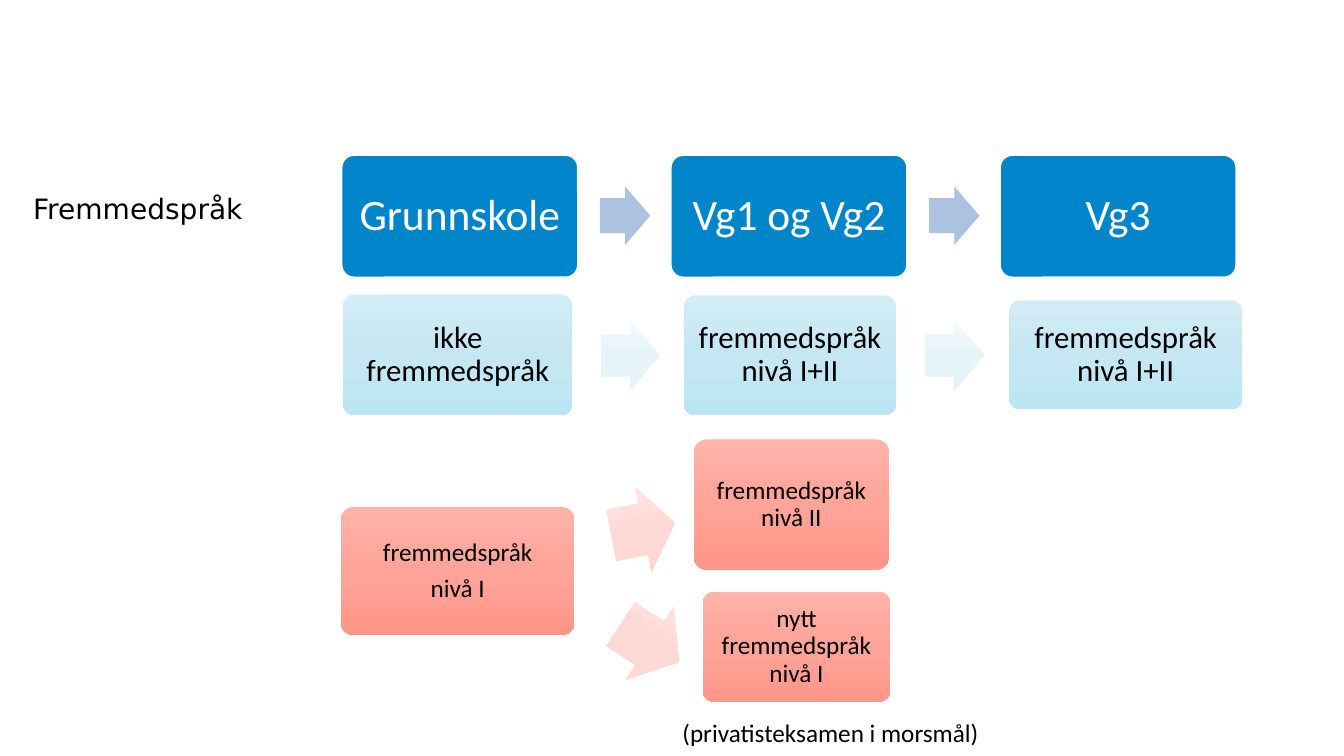
from copy import deepcopy
from dataclasses import dataclass

from pptx import Presentation
from pptx.dml.color import RGBColor
from pptx.enum.shapes import MSO_SHAPE
from pptx.enum.text import MSO_ANCHOR, MSO_AUTO_SIZE, PP_ALIGN
from pptx.oxml.ns import qn
from pptx.util import Inches, Pt

ROUND = MSO_SHAPE.ROUNDED_RECTANGLE
ARROW = MSO_SHAPE.RIGHT_ARROW
MIDDLE = MSO_ANCHOR.MIDDLE
CENTER = PP_ALIGN.CENTER
FIT = MSO_AUTO_SIZE.SHAPE_TO_FIT_TEXT

Frame = tuple[float, float, float, float]


@dataclass(frozen=True)
class Style:
    box: tuple[str, ...]
    arrow: tuple[str, ...]
    ink: str
    size: float
    inset: float
    line: str = ""


@dataclass(frozen=True)
class Theme:
    font: str = "Calibri"
    label: str = "DejaVu Sans"
    ink: str = "000000"
    note: float = 18
    title: float = 20
    head: Style = Style(("0085CA",), ("ABC2E1",), "FFFFFF", 31, 0.13, "FFFFFF")
    blue: Style = Style(("D3EDF6", "C5E7F3", "BBE5F3"),
                        ("F4FAFD", "E6F4F9", "E2F3F9"), "000000", 22, 0.09)
    red: Style = Style(("FFB3A9", "FFA499", "FF9688"),
                       ("FFE9E7", "FFD9D6", "FFD5D1"), "000000", 18, 0.07)


@dataclass(frozen=True)
class Box:
    frame: Frame
    style: Style
    lines: tuple[str, ...]


@dataclass(frozen=True)
class Arrow:
    frame: Frame
    style: Style
    turn: float = 0


THEME = Theme()
STEP = 3.265
HEADS = ("Grunnskole", "Vg1 og Vg2", "Vg3")

BOXES = [Box((3.39 + STEP * i, 1.54, 2.34, 1.21), THEME.head, (name,))
         for i, name in enumerate(HEADS)] + [
    Box((3.4, 2.92, 2.28, 1.2), THEME.blue, ("ikke fremmedspråk",)),
    Box((6.78, 2.93, 2.11, 1.19), THEME.blue, ("fremmedspråk nivå I+II",)),
    Box((10.01, 2.98, 2.31, 1.08), THEME.blue, ("fremmedspråk nivå I+II",)),
    Box((3.38, 5.03, 2.32, 1.27), THEME.red, ("fremmedspråk", "nivå I")),
    Box((6.88, 4.36, 1.94, 1.29), THEME.red, ("fremmedspråk nivå II",)),
    Box((6.97, 5.87, 1.86, 1.09), THEME.red, ("nytt fremmedspråk nivå I",)),
]

ARROWS = [Arrow((5.95 + STEP * i, 1.85, 0.5, 0.58), THEME.head)
          for i in range(len(HEADS) - 1)] + [
    Arrow((5.96, 3.18, 0.58, 0.69), THEME.blue),
    Arrow((9.17, 3.18, 0.59, 0.69), THEME.blue),
    Arrow((6.06, 4.82, 0.64, 0.86), THEME.red, 348.9),
    Arrow((6.1, 5.95, 0.69, 0.86), THEME.red, 33.1),
]


def paint(shape, tones: tuple[str, ...]) -> None:
    fill = shape.fill
    if len(tones) == 1:
        fill.solid()
        fill.fore_color.rgb = RGBColor.from_string(tones[0])
        return
    fill.gradient()
    fill.gradient_angle = 270
    stops = shape._element.spPr.find(qn("a:gradFill")).find(qn("a:gsLst"))
    while len(stops) < len(tones):
        stops.append(deepcopy(stops[0]))
    for i, (stop, tone) in enumerate(zip(fill.gradient_stops, tones)):
        stop.position = i / (len(tones) - 1)
        stop.color.rgb = RGBColor.from_string(tone)


def add_form(slide, kind, frame: Frame, tones: tuple[str, ...], line: str = ""):
    shape = slide.shapes.add_shape(kind, *map(Inches, frame))
    shape.shadow.inherit = False
    paint(shape, tones)
    if line:
        shape.line.color.rgb = RGBColor.from_string(line)
        shape.line.width = Pt(1)
    else:
        shape.line.fill.background()
    return shape


def add_run(para, text: str, font: str, size: float, ink: str) -> None:
    run = para.add_run()
    run.text = text
    run.font.name = font
    run.font.size = Pt(size)
    run.font.color.rgb = RGBColor.from_string(ink)


def add_box(slide, box: Box) -> None:
    style = box.style
    shape = add_form(slide, ROUND, box.frame, style.box, style.line)
    shape.adjustments[0] = 0.1
    frame = shape.text_frame
    frame.word_wrap = True
    frame.vertical_anchor = MIDDLE
    frame.margin_left = frame.margin_right = Inches(style.inset)
    frame.margin_top = frame.margin_bottom = Inches(style.inset)
    for i, line in enumerate(box.lines):
        para = frame.add_paragraph() if i else frame.paragraphs[0]
        para.alignment = CENTER
        para.line_spacing = 0.9
        para.space_after = Pt(0.35 * style.size)
        add_run(para, line, THEME.font, style.size, style.ink)


def add_arrow(slide, arrow: Arrow) -> None:
    shape = add_form(slide, ARROW, arrow.frame, arrow.style.arrow)
    shape.adjustments[0] = 0.6
    shape.adjustments[1] = 0.5
    shape.rotation = arrow.turn


def add_label(slide, at: Frame, text: str, font: str, size: float, wrap: bool) -> None:
    frame = slide.shapes.add_textbox(*map(Inches, at)).text_frame
    frame.word_wrap = wrap
    frame.auto_size = FIT
    add_run(frame.paragraphs[0], text, font, size, THEME.ink)


def main() -> None:
    deck = Presentation()
    deck.slide_width = Inches(13.33)
    deck.slide_height = Inches(7.5)
    slide = deck.slides.add_slide(deck.slide_layouts[6])
    for box in BOXES:
        add_box(slide, box)
    for arrow in ARROWS:
        add_arrow(slide, arrow)
    add_label(slide, (6.67, 7.07, 3.17, 0.4), "(privatisteksamen i morsmål)",
              THEME.font, THEME.note, False)
    add_label(slide, (0.23, 1.85, 2.38, 0.44), "Fremmedspråk",
              THEME.label, THEME.title, True)
    deck.save("out.pptx")


if __name__ == "__main__":
    main()
